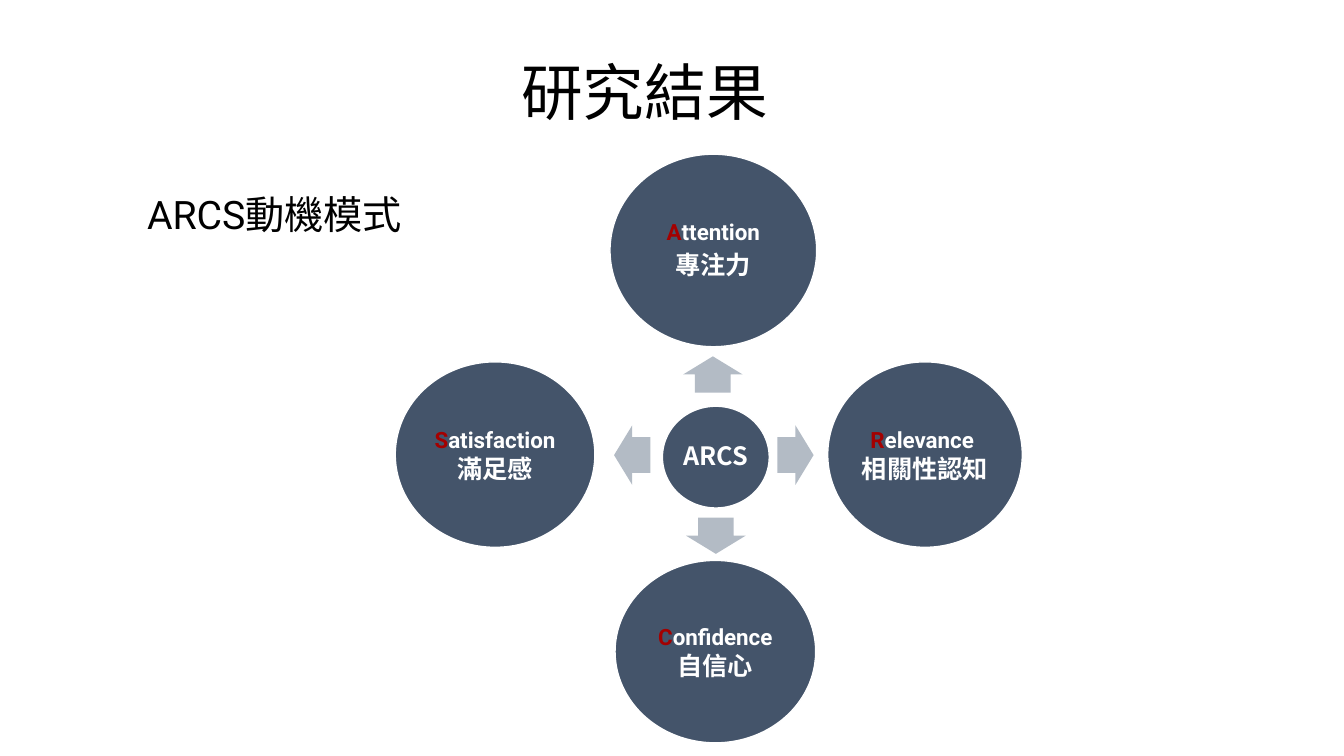
from pptx import Presentation
from pptx import util as u
from pptx.dml.color import RGBColor
from pptx.enum import shapes, text

COLORS = {"ink": "000000", "paper": "FFFFFF", "slate": "44546A",
          "mist": "B3BBC5", "red": "A40000"}
LATIN, CJK = "Roboto", "Noto Sans CJK SC"
TIGHT = {"line_spacing": 0.9, "space_after": u.Pt(5)}


class Deck:
    """Holds the style and current slide; the grid has ten cells an inch."""

    def __init__(self):
        self.prs = Presentation()
        self.prs.slide_width = u.Inches(13.33)
        self.prs.slide_height = u.Inches(7.5)
        self.slide = self.prs.slides.add_slide(self.prs.slide_layouts[5])

    def cells(self, *counts):
        return [u.Inches(n / 10) for n in counts]

    def centred(self, cx, cy, w, h):
        return self.cells(cx - w / 2, cy - h / 2, w, h)

    def apply(self, obj, formats):
        for name, value in formats.items():
            setattr(obj, name, value)

    def run(self, p, words, size, color, font=LATIN, bold=False):
        r = p.add_run()
        r.text = words
        self.apply(r.font, {"name": font, "size": u.Pt(size), "bold": bold})
        r.font.color.rgb = RGBColor.from_string(COLORS[color])

    def plain(self, sp, words, size):
        tf = sp.text_frame
        self.apply(tf, {"word_wrap": True, "auto_size": text.MSO_AUTO_SIZE.NONE,
                        "vertical_anchor": text.MSO_ANCHOR.TOP})
        p = tf.paragraphs[0]
        p.alignment = text.PP_ALIGN.LEFT
        self.run(p, words, size, "ink")

    def title(self, words, box):
        sp = self.slide.shapes.title
        self.apply(sp, dict(zip(("left", "top", "width", "height"), self.cells(*box))))
        self.plain(sp, words, 44)

    def label(self, words, box):
        self.plain(self.slide.shapes.add_textbox(*self.cells(*box)), words, 28)

    def shape(self, kind, box, fill):
        sp = self.slide.shapes.add_shape(kind, *self.centred(*box))
        sp.shadow.inherit = False
        sp.fill.solid()
        sp.fill.fore_color.rgb = RGBColor.from_string(COLORS[fill])
        return sp

    def circle(self, box, paragraphs, spacing):
        sp = self.shape(shapes.MSO_SHAPE.OVAL, box, "slate")
        sp.line.color.rgb = RGBColor.from_string(COLORS["paper"])
        sp.line.width = u.Pt(1)
        tf = sp.text_frame
        self.apply(tf, {"word_wrap": True, "vertical_anchor": text.MSO_ANCHOR.MIDDLE})
        self.apply(tf, {f"margin_{side}": u.Inches(0.03)
                        for side in ("left", "top", "right", "bottom")})
        for i, runs in enumerate(paragraphs):
            p = tf.add_paragraph() if i else tf.paragraphs[0]
            self.apply(p, {"alignment": text.PP_ALIGN.CENTER, **spacing})
            for words, size, color, font in runs:
                self.run(p, words, size, color, font, bold=True)

    def arrow(self, cx, cy, angle):
        sp = self.shape(shapes.MSO_SHAPE.RIGHT_ARROW, (cx, cy, 3.6, 5.9), "mist")
        sp.line.fill.background()
        sp.adjustments[0], sp.adjustments[1] = 0.6, 0.5
        sp.rotation = angle


def factor(word, chinese, split):
    """Red initial, white remainder, then the Chinese term."""
    english = [(word[0], 16, "red", LATIN), (word[1:], 16, "paper", LATIN)]
    term = [(chinese, 18, "paper", LATIN)]
    return [english, term] if split else [english + term]


def main():
    deck = Deck()

    # Headings
    deck.title("研究結果", (50.7, 4.8, 26.7, 8.4))
    deck.label("ARCS動機模式", (13.6, 18.4, 27.8, 5.7))

    # Four factors: circle box, words, own paragraph for the term, spacing
    factors = [
        ((70.75, 24.85, 20.5, 19.1), "Attention", "專注力", True, TIGHT),
        ((49.1, 45.1, 19.8, 18.4), "Satisfaction", "滿足感", False, {}),
        ((70.95, 64.65, 19.9, 18.1), "Confidence", "自信心", False, {}),
        ((91.75, 45.1, 19.3, 18.4), "Relevance ", "相關性認知", True, {}),
    ]
    for box, word, chinese, split, spacing in factors:
        deck.circle(box, factor(word, chinese, split), spacing)

    # Hub
    deck.circle((71, 45.35, 10.6, 10.1), [[("ARCS", 18, "paper", CJK)]], TIGHT)

    # Arrows pointing outwards from the hub
    for cx, cy, angle in [(70.7, 37.15, 270), (78.9, 45.15, 0),
                          (71, 53.15, 90), (62.7, 45.15, 180)]:
        deck.arrow(cx, cy, angle)

    deck.prs.save("out.pptx")


if __name__ == "__main__":
    main()
